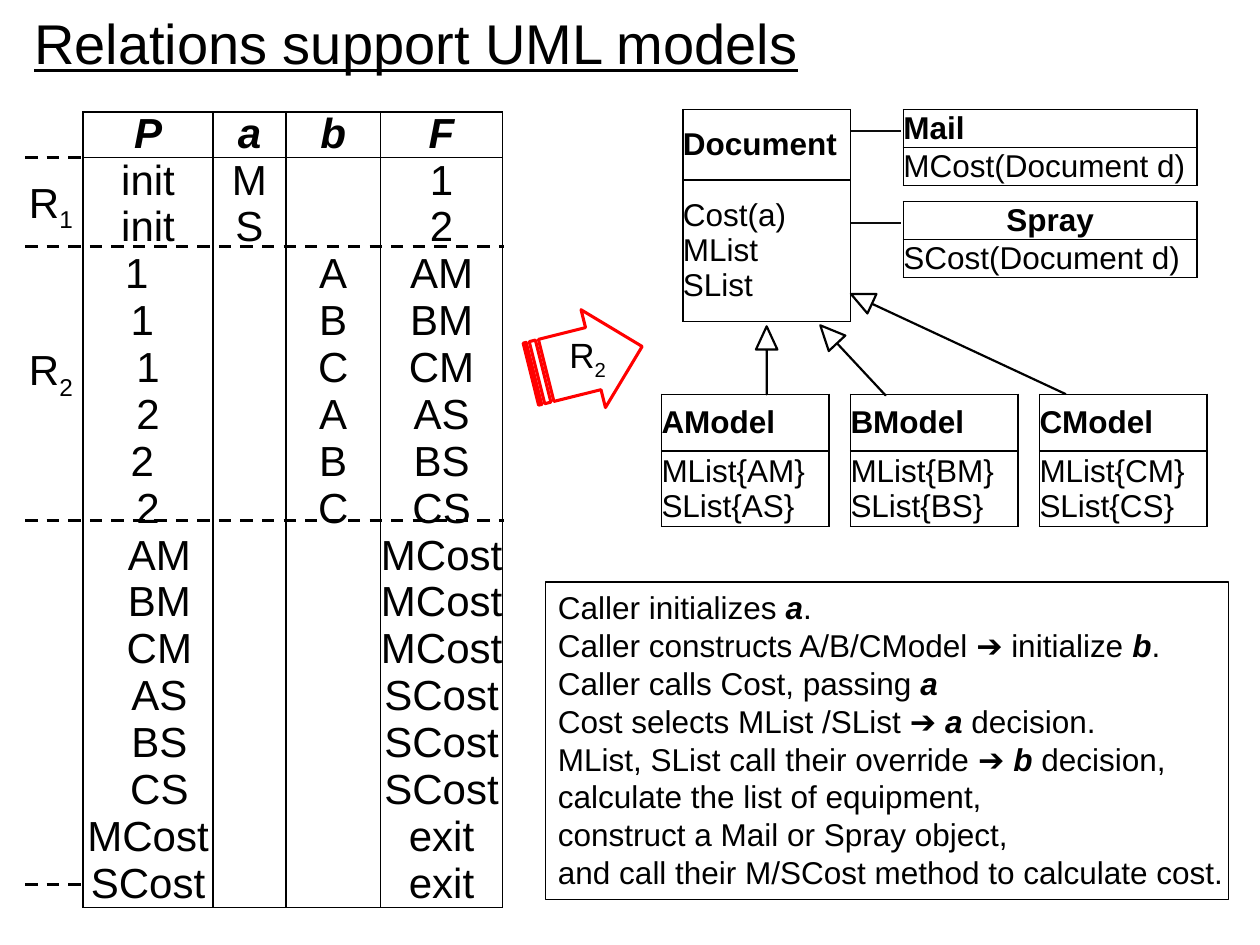
import pptx
import pptx.util
from lxml import etree
from pptx.dml.color import RGBColor
from pptx.enum.dml import MSO_LINE
from pptx.enum.shapes import MSO_CONNECTOR, MSO_SHAPE
from pptx.enum.text import MSO_ANCHOR, MSO_AUTO_SIZE, PP_ALIGN
from pptx.oxml.ns import qn
from pptx.util import Inches, Pt

COLORS = {"ink": "000000", "link": "0D0D0D", "arrow": "FF0000"}
FONT = "Arial"
PLAIN_TABLE = "{2D5ABB26-0587-4C30-8999-92F81FD0307C}"
SPACE = 0.09  # inches taken by one blank at 24 pt

HEADER = ["P", "a", "b", "F"]
RELATION = [
    ("init", "M", "", "1"), ("init", "S", "", "2"),
    *[(choice, "", model, model + kind)
      for choice, kind in (("1", "M"), ("2", "S")) for model in "ABC"],
    *[(model + kind, "", "", kind + "Cost") for kind in "MS" for model in "ABC"],
    ("MCost", "", "", "exit"), ("SCost", "", "", "exit"),
]
# Blanks that push an entry of column P to the left (-) or to the right (+)
SHIFTS = {3: -2, 4: -1, 7: -1, **{row: 2 for row in range(9, 15)}}

# Each line is a list of pieces; every second piece is bold italic
STEPS = [
    ["Caller initializes ", "a", "."],
    ["Caller constructs A/B/CModel ➔ initialize ", "b", "."],
    ["Caller calls Cost, passing ", "a"],
    ["Cost selects MList /SList ➔ ", "a", " decision."],
    ["MList, SList call their override ➔ ", "b", " decision,"],
    ["calculate the list of equipment,"],
    ["construct a Mail or Spray object,"],
    ["and call their M/SCost method to calculate cost."],
]


def color(name):
    return RGBColor.from_string(COLORS[name])


def set_font(font, size, bold=False, italic=False):
    font.name, font.size, font.bold, font.italic = FONT, Pt(size), bold, italic
    font.color.rgb = color("ink")


def set_margins(item, left=0, top=0, right=0, bottom=0):
    item.margin_left, item.margin_top = Inches(left), Inches(top)
    item.margin_right, item.margin_bottom = Inches(right), Inches(bottom)


def add_borders(cell, sides):
    """Draw 1 pt lines on the given sides, named by the letters L, R, T and B."""
    props = cell._tc.get_or_add_tcPr()
    for side in "LRTB":
        if side in sides:
            line = etree.SubElement(props, qn("a:ln" + side), w=str(Pt(1)))
            fill = etree.SubElement(line, qn("a:solidFill"))
            etree.SubElement(fill, qn("a:srgbClr"), val=COLORS["ink"])


def add_grid(page, left, top, widths, heights):
    frame = page.shapes.add_table(
        len(heights), len(widths), Inches(left), Inches(top),
        Inches(sum(widths)), Inches(sum(heights)))
    grid = frame.table
    grid.first_row = grid.horz_banding = False
    grid._tbl.tblPr.find(qn("a:tableStyleId")).text = PLAIN_TABLE
    for column, width in zip(grid.columns, widths):
        column.width = Inches(width)
    for row, height in zip(grid.rows, heights):
        row.height = Inches(height)
    return grid


def fill_cell(cell, text, size, sides, bold=False, italic=False, align=PP_ALIGN.LEFT, pitch=None):
    add_borders(cell, sides)
    cell.fill.background()
    cell.vertical_anchor = MSO_ANCHOR.MIDDLE
    set_margins(cell)
    cell.text = text
    for para in cell.text_frame.paragraphs:
        para.alignment = align
        para.line_spacing = pitch
        set_font(para.font, size, bold, italic)


def add_line(page, start, end, width, name="ink", dashed=False):
    line = page.shapes.add_connector(
        MSO_CONNECTOR.STRAIGHT, *[Inches(value) for value in (*start, *end)])
    line.line.color.rgb = color(name)
    line.line.width = Pt(width)
    if dashed:
        line.line.dash_style = MSO_LINE.DASH
    etree.SubElement(line._element.spPr, qn("a:effectLst"))


def add_outline(page, kind, box, width, name="ink", turn=0, adjust=()):
    shape = page.shapes.add_shape(kind, *[Inches(value) for value in box])
    shape.shadow.inherit = False
    shape.fill.background()
    shape.line.color.rgb = color(name)
    shape.line.width = Pt(width)
    shape.rotation = turn
    for index, value in enumerate(adjust):
        shape.adjustments[index] = value
    return shape


def add_relation_label(page, box, number, size, margins=(0, 0, 0, 0)):
    frame = page.shapes.add_textbox(*[Inches(value) for value in box]).text_frame
    frame.word_wrap = True
    frame.auto_size = MSO_AUTO_SIZE.SHAPE_TO_FIT_TEXT
    set_margins(frame, *margins)
    para = frame.paragraphs[0]
    set_font(para.font, size)
    para.add_run().text = "R"
    span = para.add_run()
    span.text = number
    span._r.get_or_add_rPr().set("baseline", "-25000")


def set_title(page, left, top, width, height):
    title = page.shapes.title
    title.left, title.top = Inches(left), Inches(top)
    title.width, title.height = Inches(width), Inches(height)
    frame = title.text_frame
    frame.text = "Relations support UML models"
    frame.vertical_anchor = MSO_ANCHOR.TOP
    set_margins(frame)
    para = frame.paragraphs[0]
    para.alignment = PP_ALIGN.LEFT
    set_font(para.font, 32)
    para.font.underline = True


def add_relation_table(page, left, top):
    """Place the P-a-b-F table with its dashed separators and R labels."""
    row_height = 5.95 / len(RELATION)
    grid = add_grid(page, left, top, [1.03, 0.58, 0.75, 0.97],
                    [0.36] + [row_height] * len(RELATION))
    for r, row in enumerate([HEADER, *RELATION]):
        sides = "LRTB" if r == 0 else "LRB" if r == len(RELATION) else "LR"
        for c, text in enumerate(row):
            fill_cell(grid.cell(r, c), text, 24, sides, r == 0, r == 0,
                      PP_ALIGN.CENTER, Pt(26))
    for r, blanks in SHIFTS.items():
        set_margins(grid.cell(r, 0), left=max(blanks, 0) * SPACE,
                    right=max(-blanks, 0) * SPACE)
    for drop, length in ((0.36, 0.47), (1.07, 3.8), (3.24, 3.8), (6.13, 0.47)):
        start = left - 0.46
        add_line(page, (start, top + drop), (start + length, top + drop), 1.75, dashed=True)
    for number, drop in (("1", 0.51), ("2", 1.84)):
        add_relation_label(page, (left - 0.43, top + drop, 0.42, 0.4), number, 24)


def add_class(page, box, name, members, heights, align=PP_ALIGN.LEFT):
    """Place a UML class: a name cell above a cell of members."""
    left, top, width = box
    grid = add_grid(page, left, top, [width], heights)
    fill_cell(grid.cell(0, 0), name, 18, "LRTB", bold=True, align=align)
    fill_cell(grid.cell(1, 0), "\n".join(members), 18, "LRTB")


def add_class_diagram(page, left, top):
    add_class(page, (left + 0.17, top, 1.33), "Document",
              ["Cost(a)", "MList", "SList"], [0.56, 1.12])
    for index, model in enumerate("ABC"):
        add_class(page, (left + 1.5 * index, top + 2.26, 1.33), model + "Model",
                  [f"MList{{{model}M}}", f"SList{{{model}S}}"], [0.45, 0.45])
    for name, drop, name_height, align, link in (
            ("Mail", 0, 0.25, PP_ALIGN.LEFT, 0.17),
            ("Spray", 0.73, 0.3, PP_ALIGN.CENTER, 0.9)):
        add_class(page, (left + 1.92, top + drop, 2.33), name,
                  [name[0] + "Cost(Document d)"], [name_height, 0.3], align)
        add_line(page, (left + 1.5, top + link), (left + 1.9, top + link), 1.5, "link")
    for x, y, width, height, turn in ((0.75, 1.72, 0.17, 0.54, 0),
                                      (1.43, 1.61, 0.18, 0.76, 317),
                                      (2.27, 0.92, 0.17, 1.88, 295)):
        add_outline(page, MSO_SHAPE.UP_ARROW, (left + x, top + y, width, height),
                    1.25, turn=turn, adjust=(0, 1.085))


def add_steps(page, box):
    frame = add_outline(page, MSO_SHAPE.RECTANGLE, box, 0.75).text_frame
    frame.word_wrap = True
    frame.vertical_anchor = MSO_ANCHOR.TOP
    set_margins(frame, 0.1, 0.05, 0, 0.05)
    for index, pieces in enumerate(STEPS):
        para = frame.paragraphs[0] if index == 0 else frame.add_paragraph()
        para.alignment = PP_ALIGN.LEFT
        for position, text in enumerate(pieces):
            span = para.add_run()
            span.text = text
            strong = position % 2 == 1
            set_font(span.font, 18, strong, strong)


def add_mapping_arrow(page, left, top):
    add_outline(page, MSO_SHAPE.STRIPED_RIGHT_ARROW, (left, top, 0.91, 0.8),
                1.75, "arrow", 346, (0.634, 0.5))
    add_relation_label(page, (left + 0.22, top + 0.14, 0.58, 0.44), "2", 20,
                       (0.1, 0.05, 0.1, 0.05))


def main():
    deck = pptx.Presentation()
    deck.slide_width, deck.slide_height = Inches(10), Inches(7.5)
    page = deck.slides.add_slide(deck.slide_layouts[5])
    set_title(page, 0.27, 0.07, 6.58, 0.54)
    add_relation_table(page, 0.66, 0.89)
    add_class_diagram(page, 5.25, 0.87)
    add_steps(page, (4.33, 4.62, 5.42, 2.52))
    add_mapping_arrow(page, 4.2, 2.46)
    deck.save("out.pptx")


if __name__ == "__main__":
    main()
